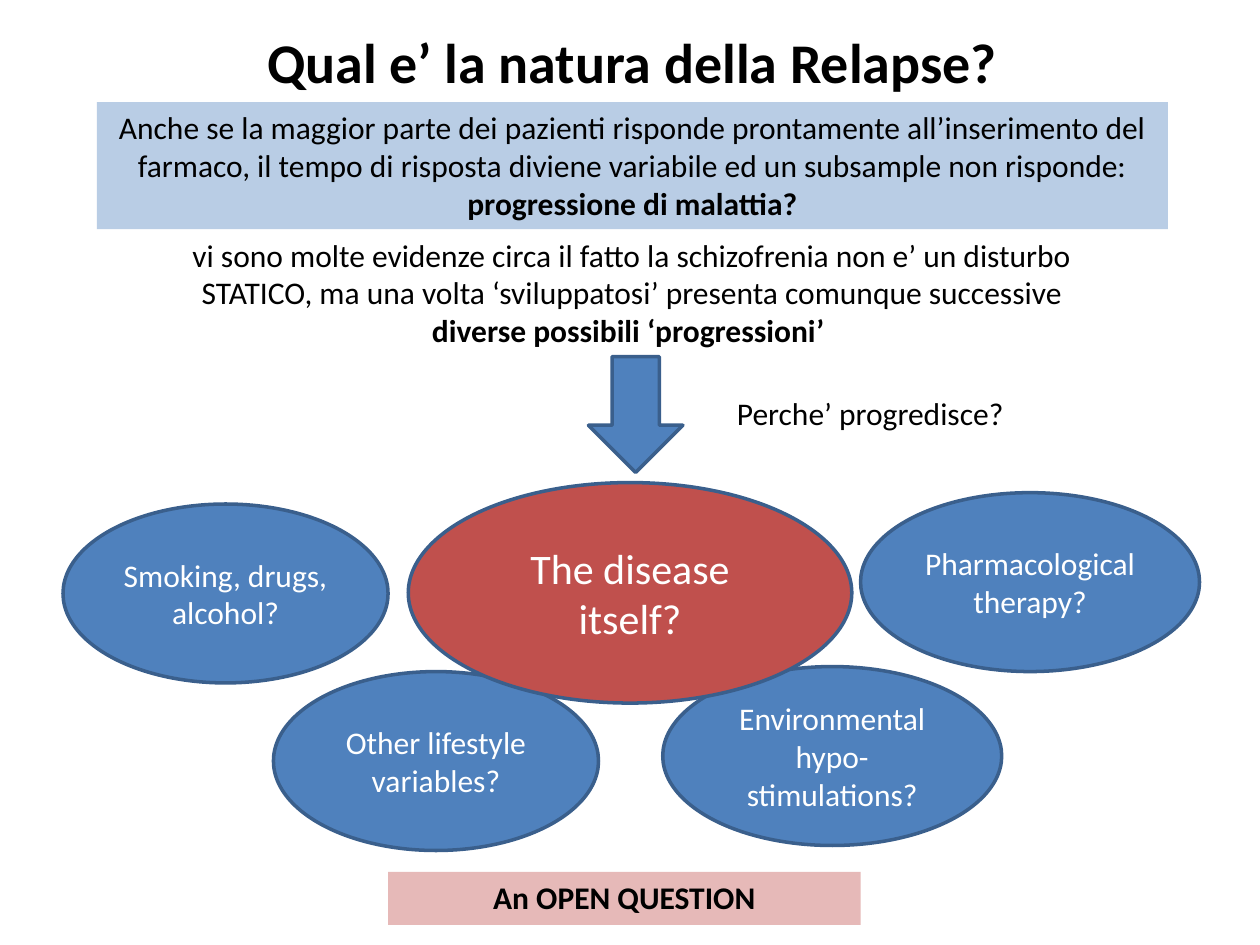
import pptx
import pptx.util
import pptx.dml.color
import pptx.enum.shapes
import pptx.enum.text

Inches = pptx.util.Inches
Pt = pptx.util.Pt
Shape = pptx.enum.shapes.MSO_SHAPE
Align = pptx.enum.text.PP_ALIGN
Anchor = pptx.enum.text.MSO_ANCHOR

WIDE, HIGH = 10, 7.5
BLACK, WHITE = "000000", "FFFFFF"
BLUE, EDGE, RED = "4F81BD", "3A5F8C", "C0504D"
PALE, PINK = "B9CDE5", "E6B9B8"

# Main column shared by the title and the statement below it
LEFT, SPAN = 0.77, 8.5
TOP = 0.81

# Outer causes: text, left, top, width
CAUSES = [
    ("Smoking, drugs, alcohol?", 0.5, 4, 2.58),
    ("Other lifestyle variables?", 2.17, 5.33, 2.58),
    ("Pharmacological therapy?", 6.83, 3.91, 2.69),
    ("Environmental hypo-stimulations?", 5.26, 5.29, 2.69),
]


def color(code):
    return pptx.dml.color.RGBColor.from_string(code)


def box(left, top, width, height):
    return [Inches(v) for v in (left, top, width, height)]


def write(shape, text, strong="", size=18, ink=BLACK, bold=False,
          align=Align.CENTER, anchor=Anchor.TOP):
    """Set the text, with an optional bold ending, and format its runs."""
    frame = shape.text_frame
    frame.text = text
    frame.word_wrap = True
    frame.vertical_anchor = anchor
    line = frame.paragraphs[0]
    line.alignment = align
    if strong:
        line.add_run().text = strong
    for run in line.runs:
        run.font.name = "Calibri"
        run.font.size = Pt(size)
        run.font.bold = bold or run.text == strong
        run.font.color.rgb = color(ink)


def form(slide, kind, place, fill, edge=None):
    shape = slide.shapes.add_shape(kind, *box(*place))
    shape.shadow.inherit = False
    shape.fill.solid()
    shape.fill.fore_color.rgb = color(fill)
    if edge:
        shape.line.color.rgb = color(edge)
        shape.line.width = Pt(2)
    else:
        shape.line.fill.background()
    return shape


def oval(slide, text, place, fill=BLUE, size=18):
    shape = form(slide, Shape.OVAL, place, fill, EDGE)
    write(shape, text, size=size, ink=WHITE, anchor=Anchor.MIDDLE)


def band(slide, place, fill, text, **style):
    write(form(slide, Shape.RECTANGLE, place, fill), text, **style)


def note(slide, place, text, **style):
    write(slide.shapes.add_textbox(*box(*place)), text, **style)


def head(slide, text):
    title = slide.shapes.title
    title.left, title.top, title.width, title.height = box(
        LEFT, TOP - 0.64, SPAN, 0.64)
    write(title, text, size=32, bold=True)


def main():
    deck = pptx.Presentation()
    deck.slide_width, deck.slide_height = Inches(WIDE), Inches(HIGH)
    slide = deck.slides.add_slide(deck.slide_layouts[5])

    head(slide, "Qual e’ la natura della Relapse?")
    band(slide, (LEFT, TOP, SPAN, 1.01), PALE,
         "Anche se la maggior parte dei pazienti risponde prontamente "
         "all’inserimento del farmaco, il tempo di risposta diviene "
         "variabile ed un subsample non risponde: ",
         strong="progressione di malattia?")
    note(slide, (1.39, TOP + 1.01, 7.25, 1.01),
         "vi sono molte evidenze circa il fatto la schizofrenia non e’ un "
         "disturbo STATICO, ma una volta ‘sviluppatosi’ presenta comunque "
         "successive ",
         strong="diverse possibili ‘progressioni’ ")
    form(slide, Shape.DOWN_ARROW, (4.67, 2.83, 0.75, 0.92), BLUE, EDGE)
    note(slide, (5.75, 3.08, 3.08, 0.4), "Perche’ progredisce?",
         align=Align.LEFT)

    for text, left, top, width in CAUSES:
        oval(slide, text, (left, top, width, 1.42))
    oval(slide, "The disease itself?", (3.24, 3.83, 3.52, 1.75), RED, 24)
    band(slide, (3.08, 6.92, 3.75, 0.42), PINK, "An OPEN QUESTION", bold=True)

    deck.save("out.pptx")


if __name__ == "__main__":
    main()
